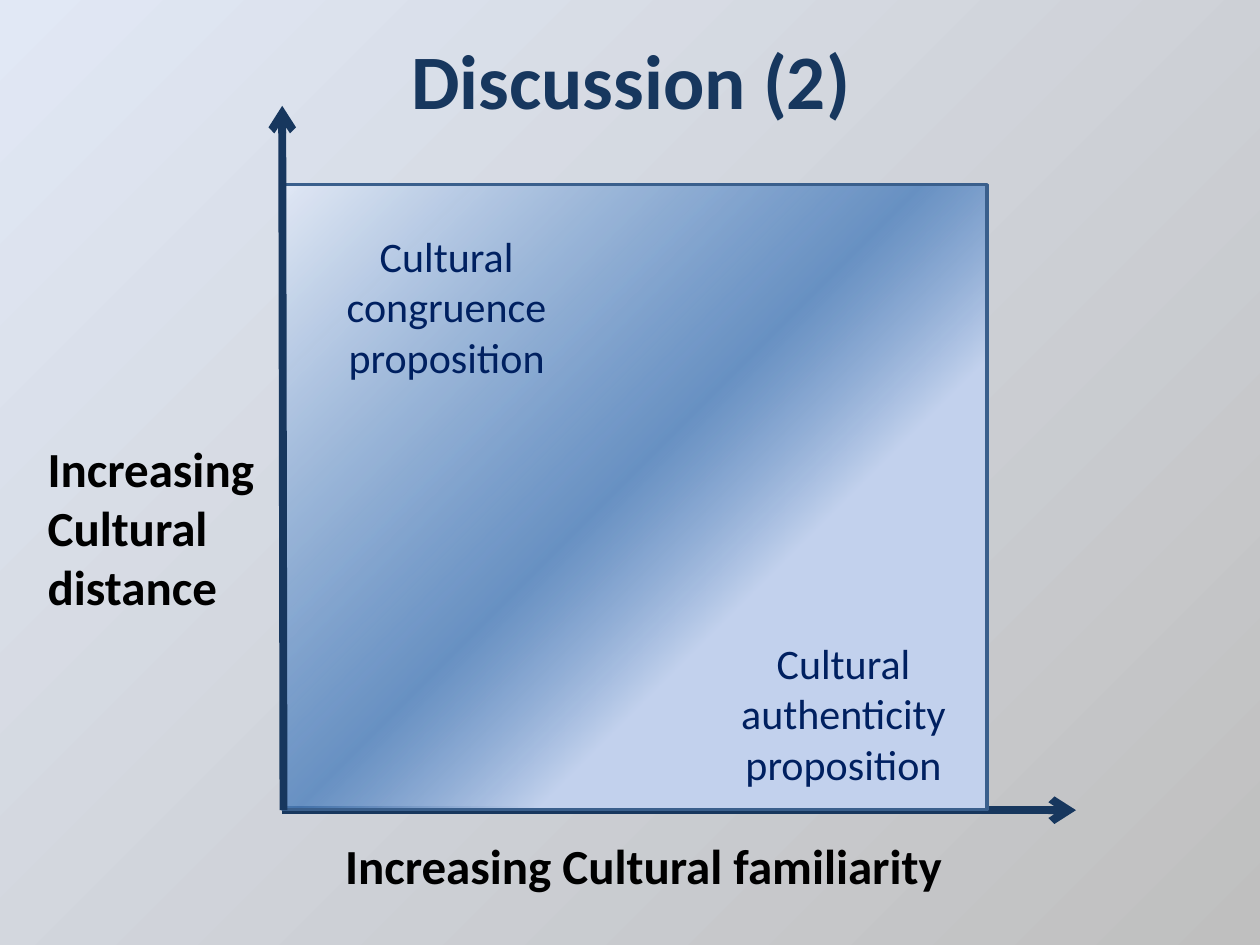
from lxml.etree import SubElement
from pptx import Presentation
from pptx.dml.color import RGBColor
from pptx.enum.shapes import MSO_CONNECTOR, MSO_SHAPE
from pptx.enum.text import MSO_ANCHOR, MSO_AUTO_SIZE, PP_ALIGN
from pptx.oxml.ns import qn
from pptx.util import Inches, Pt

TITLE = "Discussion (2)"
NAVY, BLACK, LABEL_BLUE, BORDER = "17375E", "000000", "002060", "3A5F8C"

# Gradient stops: position %, colour, opacity %
BACKGROUND_STOPS = [(0, "BFBFBF", 34), (100, "E1E8F5", 100)]
PLOT_STOPS = [(34, "C2D1ED", 100), (52, "4F81BD", 80), (100, "E1E8F5", 100)]

# Paragraphs, (left, top, width, height)
AXIS_LABELS = [
    (["Increasing", "Cultural distance"], (0.28, 3.43, 2.13, 1.51)),
    (["Increasing Cultural familiarity"], (2.64, 6.58, 5.2, 0.57)),
]
PROPOSITIONS = [
    (["Cultural congruence proposition"], (2.56, 1.78, 1.97, 1.31)),
    (["Cultural authenticity proposition"], (5.71, 5.01, 1.97, 1.31)),
]
PLOT_AREA = (2.56, 1.15, 4.96, 5.59)  # before its quarter turn
FAMILIARITY_AXIS = (2.24, 6.43, 8.54, 6.43)
DISTANCE_AXIS = (2.25, 6.43, 2.24, 0.84)


def inches(values):
    return [Inches(value) for value in values]


def color(value):
    return RGBColor.from_string(value)


def set_gradient(fill, parent, stops, angle=None):
    """Fill with stops, linear at a clockwise angle, or circular from bottom right."""
    fill.solid()
    solid = next(parent.iter(qn("a:solidFill")))
    holder = solid.getparent()
    gradient = SubElement(holder, qn("a:gradFill"), rotWithShape="1")
    holder.replace(solid, gradient)
    stop_list = SubElement(gradient, qn("a:gsLst"))
    for position, value, opacity in stops:
        stop = SubElement(stop_list, qn("a:gs"), pos=str(position * 1000))
        tint = SubElement(stop, qn("a:srgbClr"), val=value)
        if opacity < 100:
            SubElement(tint, qn("a:alpha"), val=str(opacity * 1000))
    if angle is None:
        circle = SubElement(gradient, qn("a:path"), path="circle")
        SubElement(circle, qn("a:fillToRect"), l="100000", t="100000")
    else:
        SubElement(gradient, qn("a:lin"), ang=str(angle * 60000), scaled="0")


def format_text(paragraph, size, value, bold, alignment):
    font = paragraph.font
    font.name, font.size, font.bold = "Calibri", Pt(size), bold
    font.color.rgb = color(value)
    paragraph.alignment = alignment


def add_label(slide, lines, place, **style):
    box = slide.shapes.add_textbox(*inches(place))
    frame = box.text_frame
    frame.word_wrap = True
    frame.auto_size = MSO_AUTO_SIZE.SHAPE_TO_FIT_TEXT
    frame.text = "\n".join(lines)
    for paragraph in frame.paragraphs:
        format_text(paragraph, **style)


def add_axis(slide, ends):
    axis = slide.shapes.add_connector(MSO_CONNECTOR.STRAIGHT, *inches(ends))
    axis.line.color.rgb = color(NAVY)
    axis.line.width = Pt(4.5)
    SubElement(axis.line._get_or_add_ln(), qn("a:tailEnd"), type="arrow")
    SubElement(axis._element.spPr, qn("a:effectLst"))


def add_plot_area(slide):
    plot = slide.shapes.add_shape(MSO_SHAPE.RECTANGLE, *inches(PLOT_AREA))
    plot.rotation = 270
    plot.shadow.inherit = False
    set_gradient(plot.fill, plot._element.spPr, PLOT_STOPS, angle=315)
    plot.line.color.rgb = color(BORDER)
    plot.line.width = Pt(2)


def main():
    deck = Presentation()
    deck.slide_width, deck.slide_height = inches((10, 7.5))
    slide = deck.slides.add_slide(deck.slide_layouts[5])
    set_gradient(slide.background.fill, slide._element, BACKGROUND_STOPS)

    title = slide.shapes.title
    title.left, title.top, title.width, title.height = inches((0.51, 0, 9, 1.25))
    title.text_frame.text = TITLE
    title.text_frame.vertical_anchor = MSO_ANCHOR.MIDDLE
    format_text(title.text_frame.paragraphs[0], 44, NAVY, True, PP_ALIGN.CENTER)

    add_axis(slide, FAMILIARITY_AXIS)
    for lines, place in AXIS_LABELS:
        add_label(slide, lines, place, size=28, value=BLACK, bold=True,
                  alignment=PP_ALIGN.LEFT)
    add_plot_area(slide)
    for lines, place in PROPOSITIONS:
        add_label(slide, lines, place, size=24, value=LABEL_BLUE, bold=False,
                  alignment=PP_ALIGN.CENTER)
    add_axis(slide, DISTANCE_AXIS)
    deck.save("out.pptx")


if __name__ == "__main__":
    main()
